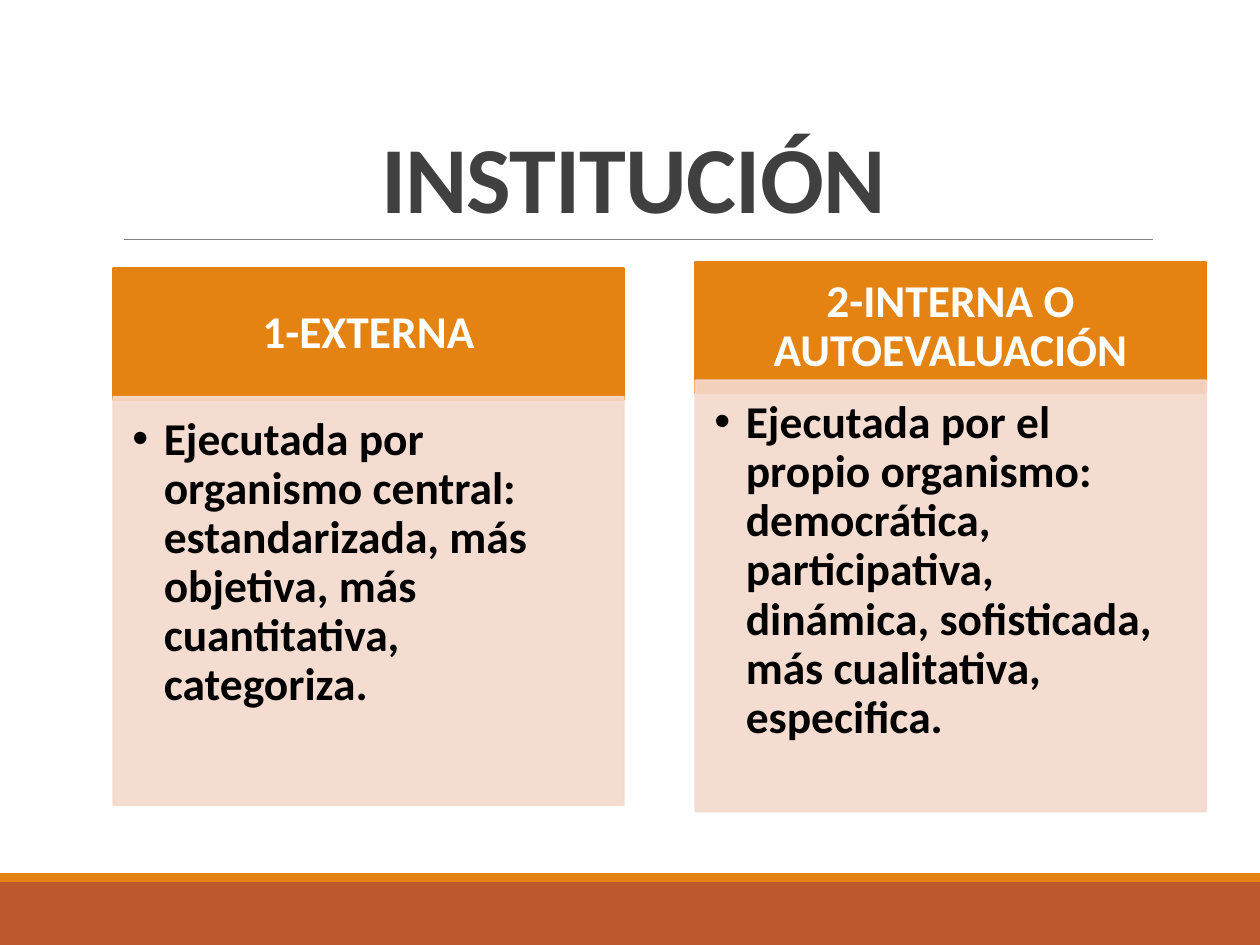
from lxml.etree import SubElement
from pptx import Presentation
from pptx.dml.color import RGBColor
from pptx.enum.shapes import MSO_CONNECTOR as Connector, MSO_SHAPE as Shape
from pptx.enum.text import MSO_ANCHOR as Anchor, MSO_AUTO_SIZE as AutoSize, PP_ALIGN as Align
from pptx.oxml.ns import qn
from pptx.util import Pt

COLORS = {"orange": "E48312", "rust": "BD582C", "pale": "F5D9CC", "rule": "808080",
          "title": "404040", "white": "FFFFFF", "black": "000000"}
WIDTH, HEIGHT = 720, 540
TITLE = "INSTITUCIÓN"
COLUMNS = [
    {"header": "1-EXTERNA",
     "body": "Ejecutada por organismo central: estandarizada, más objetiva, más cuantitativa, categoriza.",
     "left": 64.8, "header_top": 153.4, "body_top": 226.8, "body_height": 233.3},
    {"header": "2-INTERNA O AUTOEVALUACIÓN",
     "body": "Ejecutada por el propio organismo: democrática, participativa, dinámica, sofisticada, "
             "más cualitativa, especifica.",
     "left": 397.4, "header_top": 149.8, "body_top": 217.4, "body_height": 246.2},
]
COLUMN_WIDTH, HEADER_HEIGHT = 291.6, 74.9
BANDS = [("rust", 504, 36), ("orange", 499, 5)]


def color(name):
    return RGBColor.from_string(COLORS[name])


def place(shape, left, top, width, height):
    shape.left, shape.top, shape.width, shape.height = map(Pt, (left, top, width, height))


def paint(shape, name, opacity=100):
    shape.fill.solid()
    shape.fill.fore_color.rgb = color(name)
    shape.line.color.rgb = color(name)
    shape.line.width = Pt(1.25)
    if opacity < 100:
        for fill in shape._element.spPr.iter(qn("a:srgbClr")):
            SubElement(fill, qn("a:alpha"), val=str(opacity * 1000))


def write(shape, text, *, size, ink, align, anchor, insets, line_spacing, hanging=0, tracking=0):
    frame = shape.text_frame
    frame.text = text
    frame.word_wrap = True
    frame.auto_size = AutoSize.NONE
    frame.vertical_anchor = anchor
    frame.margin_left, frame.margin_top, frame.margin_right, frame.margin_bottom = map(Pt, insets)
    paragraph = frame.paragraphs[0]
    paragraph.alignment = align
    paragraph.line_spacing = line_spacing
    paragraph.space_before = Pt(0)
    if hanging:
        properties = paragraph._p.get_or_add_pPr()
        properties.set("marL", str(Pt(hanging)))
        properties.set("indent", str(-Pt(hanging)))
    run = paragraph.runs[0]
    run.font.name = "Calibri"
    run.font.size = Pt(size)
    run.font.bold = True
    run.font.color.rgb = color(ink)
    if tracking:
        run._r.get_or_add_rPr().set("spc", str(int(tracking * 100)))


def add_band(slide, name, top, height):
    band = slide.shapes.add_shape(Shape.RECTANGLE, 0, Pt(top), Pt(WIDTH), Pt(height))
    band.shadow.inherit = False
    band.fill.solid()
    band.fill.fore_color.rgb = color(name)
    band.line.fill.background()


def add_rule(slide, left, right, top):
    rule = slide.shapes.add_connector(Connector.STRAIGHT, Pt(left), Pt(top), Pt(right), Pt(top))
    rule.line.color.rgb = color("rule")
    rule.line.width = Pt(0.5)
    SubElement(rule._element.spPr, qn("a:effectLst"))


def fill_column(header, body, column):
    place(header, column["left"], column["header_top"], COLUMN_WIDTH, HEADER_HEIGHT)
    paint(header, "orange")
    write(header, column["header"], size=26, ink="white", align=Align.CENTER, anchor=Anchor.MIDDLE,
          insets=(14.4, 8.6, 14.4, 8.6), line_spacing=0.9)
    place(body, column["left"], column["body_top"], COLUMN_WIDTH, column["body_height"])
    paint(body, "pale", opacity=90)
    write(body, column["body"], size=26, ink="black", align=Align.LEFT, anchor=Anchor.TOP,
          insets=(10.8, 10.8, 14.4, 16.6), line_spacing=0.9, hanging=18)


def main():
    presentation = Presentation()
    presentation.slide_width, presentation.slide_height = Pt(WIDTH), Pt(HEIGHT)
    slide = presentation.slides.add_slide(presentation.slide_layouts.get_by_name("Comparison"))
    title, *panels = list(slide.placeholders)
    for name, top, height in BANDS:
        add_band(slide, name, top, height)
    add_rule(slide, 70.6, 658.8, 136.8)
    place(title, 64.8, 22.3, 594, 114.5)
    write(title, TITLE, size=54, ink="title", align=Align.CENTER, anchor=Anchor.BOTTOM,
          insets=(7.2, 3.6, 7.2, 3.6), line_spacing=0.85, tracking=-0.5)
    for header, body, column in zip(panels[::2], panels[1::2], COLUMNS):
        fill_column(header, body, column)
    presentation.save("out.pptx")


if __name__ == "__main__":
    main()
